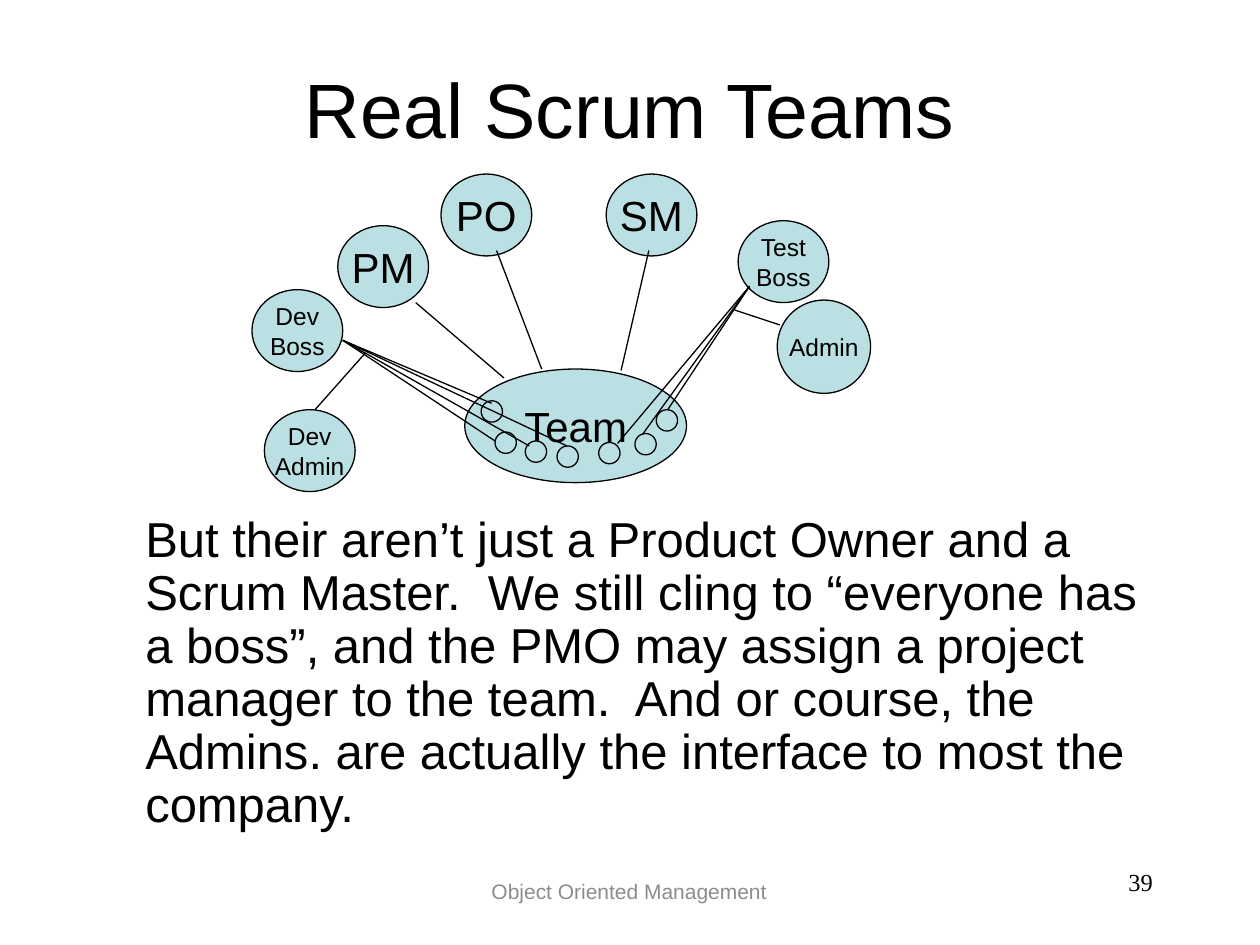
import pptx
import pptx.dml.color
import pptx.enum.shapes
import pptx.enum.text
import pptx.oxml
import pptx.util
from lxml import etree

Cm, Pt = pptx.util.Cm, pptx.util.Pt
Align = pptx.enum.text.PP_ALIGN
Anchor = pptx.enum.text.MSO_ANCHOR

THEME = {
    "font": "Arial", "number_font": "Times New Roman",
    "ink": "000000", "fill": "BBE0E3", "muted": "8C8C8C",
    "title": 44, "body": 28, "large": 24, "small": 14, "footer": 12,
    "line": 0.75,
}

TITLE = "Real Scrum Teams"
BODY = ("But their aren’t just a Product Owner and a Scrum Master.  We still cling to "
        "“everyone has a boss”, and the PMO may assign a project manager to the team.  "
        "And or course, the Admins. are actually the interface to most the company.")
FOOTER = "Object Oriented Management"
PAGE_NUMBER = "39"

# All positions and sizes are in centimetres.
ROLE_SIZE = (1.83, 1.65)
MEMBER_SIZE = (0.43, 0.43)
# label lines, left and top, width and height, type size
ROLES = [
    (["Team"], (9.37, 7.44), (4.47, 2.29), "large"),
    (["PO"], (8.89, 3.51), ROLE_SIZE, "large"),
    (["SM"], (12.22, 3.51), ROLE_SIZE, "large"),
    (["Test", "Boss"], (14.88, 4.45), ROLE_SIZE, "small"),
    (["Admin"], (15.67, 6.05), (1.88, 1.88), "small"),
    (["PM"], (6.81, 4.55), ROLE_SIZE, "large"),
    (["Dev", "Boss"], (5.08, 5.84), ROLE_SIZE, "small"),
    (["Dev", "Admin"], (5.33, 8.26), ROLE_SIZE, "small"),
]
MEMBERS = [(9.7, 8.08), (9.98, 8.71), (10.59, 8.89), (11.23, 8.99),
           (12.8, 8.74), (13.23, 8.26), (12.07, 8.92)]
# start point and the end points it fans out to
LINKS = [
    ((8.38, 6.1), [(10.16, 7.62)]),
    ((10.01, 5.05), [(10.92, 7.44)]),
    ((13.08, 5.05), [(12.52, 7.47)]),
    ((15.72, 6.55), [(14.81, 6.25)]),
    ((6.35, 8.26), [(7.37, 7.11)]),
    ((6.91, 6.86), [(9.98, 8.89), (9.91, 8.13), (11.43, 8.99), (10.67, 8.99)]),
    ((15.11, 5.77), [(13.46, 8.26), (12.95, 8.76), (12.45, 8.94)]),
]


def color(name):
    return pptx.dml.color.RGBColor.from_string(THEME[name])


def lengths(values):
    return [Cm(value) for value in values]


def write(shape, lines, size, align, anchor=Anchor.MIDDLE, wrap=True, font="font", ink="ink"):
    """Fill a shape with one paragraph per line and return its paragraphs."""
    frame = shape.text_frame
    frame.word_wrap = wrap
    frame.vertical_anchor = anchor
    frame.text = "\n".join(lines)
    for paragraph in frame.paragraphs:
        paragraph.alignment = align
        paragraph.font.name = THEME[font]
        paragraph.font.size = Pt(THEME[size])
        paragraph.font.color.rgb = color(ink)
    return frame.paragraphs


def add_text(slide, box, text, size, align, **options):
    shape = slide.shapes.add_textbox(*lengths(box))
    return write(shape, [text], size, align, **options)[0]


def style_line(shape):
    shape.line.color.rgb = color("ink")
    shape.line.width = Pt(THEME["line"])


def add_circle(slide, position, size):
    shape = slide.shapes.add_shape(
        pptx.enum.shapes.MSO_SHAPE.OVAL, *lengths(position + size))
    shape.shadow.inherit = False
    shape.fill.solid()
    shape.fill.fore_color.rgb = color("fill")
    style_line(shape)
    return shape


def add_link(slide, start, end):
    connector = slide.shapes.add_connector(
        pptx.enum.shapes.MSO_CONNECTOR.STRAIGHT, *lengths(start + end))
    style_line(connector)
    etree.SubElement(connector._element.spPr, pptx.oxml.ns.qn("a:effectLst"))


def main():
    presentation = pptx.Presentation()
    presentation.slide_width, presentation.slide_height = Cm(25.4), Cm(19.05)
    slide = presentation.slides.add_slide(presentation.slide_layouts[6])

    add_text(slide, (1.9, 1.27, 21.59, 1.8), TITLE, "title", Align.CENTER)
    body = add_text(slide, (1.73, 10.26, 21.59, 6.63), BODY, "body", Align.LEFT,
                    anchor=Anchor.TOP)
    body.line_spacing = 0.9
    body._p.get_or_add_pPr().set("marL", str(Cm(0.95)))

    for lines, position, size, type_size in ROLES:
        write(add_circle(slide, position, size), lines, type_size, Align.CENTER, wrap=False)
    for position in MEMBERS:
        add_circle(slide, position, MEMBER_SIZE)
    for start, ends in LINKS:
        for end in ends:
            add_link(slide, start, end)

    add_text(slide, (7.49, 17.35, 10.39, 1.24), FOOTER, "footer", Align.CENTER, ink="muted")
    add_text(slide, (18.21, 17.35, 5.28, 1.24), PAGE_NUMBER, "small", Align.RIGHT,
             anchor=Anchor.TOP, font="number_font")
    presentation.save("out.pptx")


if __name__ == "__main__":
    main()
